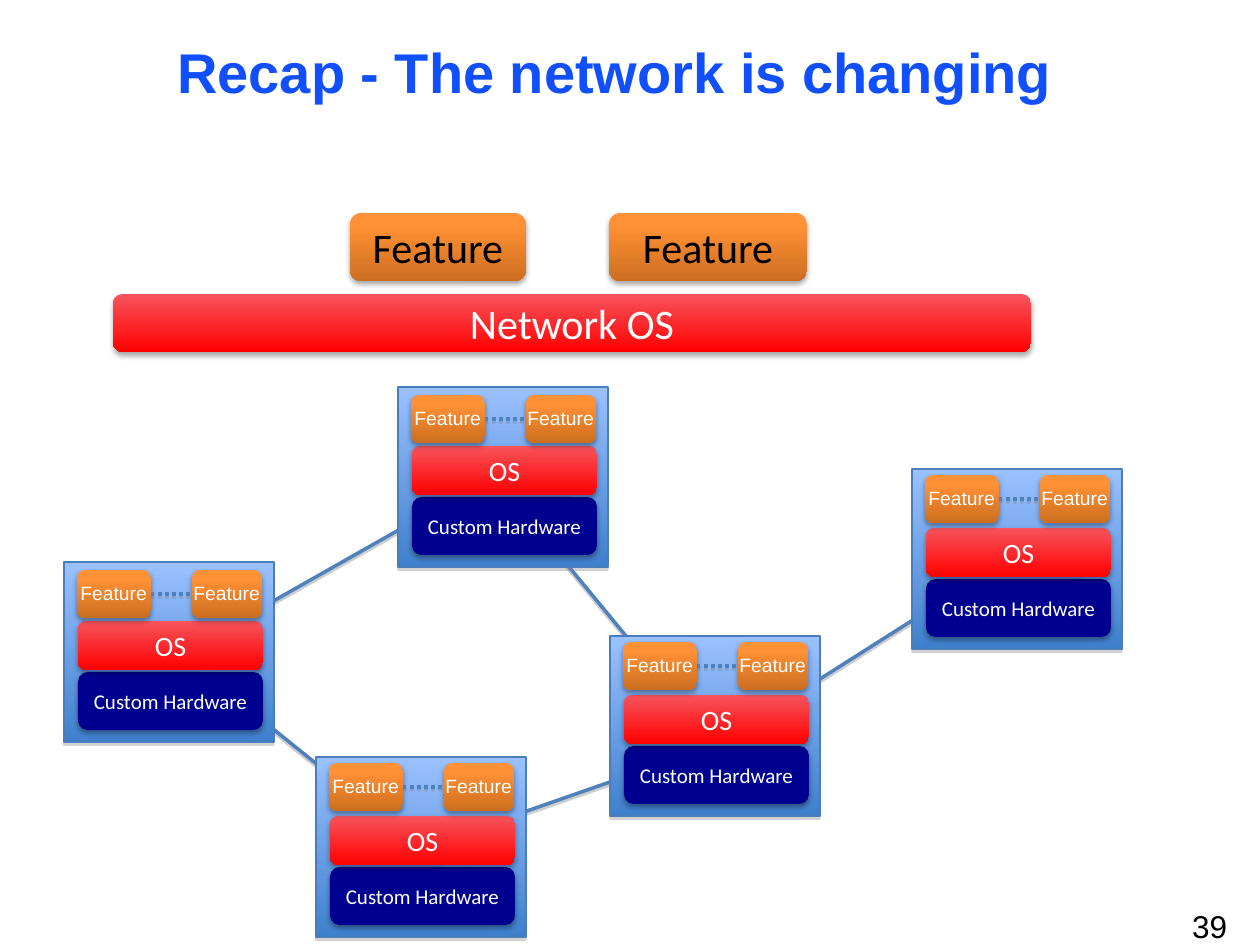
from lxml import etree
from pptx import Presentation
from pptx.dml.color import RGBColor
from pptx.enum.dml import MSO_LINE
from pptx.enum.shapes import MSO_CONNECTOR, MSO_SHAPE
from pptx.enum.text import MSO_ANCHOR, MSO_AUTO_SIZE, PP_ALIGN
from pptx.oxml.ns import qn
from pptx.util import Emu, Pt

RECT, ROUND = MSO_SHAPE.RECTANGLE, MSO_SHAPE.ROUNDED_RECTANGLE
STRAIGHT, DOT = MSO_CONNECTOR.STRAIGHT, MSO_LINE.ROUND_DOT
MIDDLE, TOP = MSO_ANCHOR.MIDDLE, MSO_ANCHOR.TOP
CENTER, LEFT = PP_ALIGN.CENTER, PP_ALIGN.LEFT
GROW = MSO_AUTO_SIZE.SHAPE_TO_FIT_TEXT

SCALE = 914400 / 126
WHITE, BLACK, NAVY = "FFFFFF", "000000", "000090"
LINK_BLUE, EDGE_BLUE, TITLE_BLUE = "4F81BD", "4A7EBB", "104FFB"
BLUE = [(0, "9BC1FF"), (100, "3F80CD")]
RED = [(0, "F7545C"), (100, "FF0000")]
ORANGE = [(0, "FF9136"), (20, "FF9034"), (100, "CC6E20")]
BOX_SHADOW = (BLACK, 35, 3.1, 1.8)
DEVICE_SHADOW = ("808080", 35, 0, 1.8)
LINE_SHADOW = ("808080", 38, 0, 1.6)

DEVICES = [(64, 562, 8), (398, 387, 8), (912, 469, 6), (316, 757, 6), (610, 636, 6)]
HUBS = [(180, 654), (494, 476), (1017, 554), (421, 848), (716, 745)]
LINKS = [(0, 1), (1, 4), (3, 4), (0, 3), (4, 2)]


def px(n):
    return Emu(round(n * SCALE))


def rgb(color):
    return RGBColor.from_string(color)


def sub(parent, tag, **attrs):
    el = etree.SubElement(parent, qn(tag))
    for name, value in attrs.items():
        el.set(name, str(value))
    return el


def add_shadow(shape, color, alpha, blur, dist):
    effects = sub(shape._element.spPr, "a:effectLst")
    outer = sub(effects, "a:outerShdw", blurRad=Pt(blur), dist=Pt(dist),
                dir=5400000, rotWithShape=0)
    clr = sub(outer, "a:srgbClr", val=color)
    sub(clr, "a:alpha", val=alpha * 1000)


def set_fill(shape, fill):
    if isinstance(fill, str):
        shape.fill.solid()
        shape.fill.fore_color.rgb = rgb(fill)
        return
    shape.fill.gradient()
    grad = shape._element.spPr.find(qn("a:gradFill"))
    for child in list(grad):
        grad.remove(child)
    stops = sub(grad, "a:gsLst")
    for pos, color in fill:
        sub(sub(stops, "a:gs", pos=pos * 1000), "a:srgbClr", val=color)
    sub(grad, "a:lin", ang=5400000, scaled=0)


def write(shape, text, size, font, color, align=CENTER, anchor=MIDDLE, bold=False):
    tf = shape.text_frame
    tf.vertical_anchor = anchor
    p = tf.paragraphs[0]
    p.alignment = align
    r = p.add_run()
    r.text = text
    r.font.size, r.font.name, r.font.bold = Pt(size), font, bold
    r.font.color.rgb = rgb(color)
    return tf


def add_box(shapes, x, y, w, h, fill, text="", size=12, color=WHITE):
    sp = shapes.add_shape(ROUND, px(x), px(y), px(w), px(h))
    set_fill(sp, fill)
    sp.line.fill.background()
    add_shadow(sp, *BOX_SHADOW)
    if text:
        write(sp, text, size, "Calibri", color)


def add_frame(shapes, x, y):
    sp = shapes.add_shape(RECT, px(x), px(y), px(210), px(180))
    set_fill(sp, BLUE)
    sp.line.color.rgb = rgb(EDGE_BLUE)
    sp.line.width = Pt(0.75)
    add_shadow(sp, *DEVICE_SHADOW)


def add_line(shapes, start, end, dash=None):
    line = shapes.add_connector(STRAIGHT, *map(px, start + end))
    line.line.color.rgb = rgb(LINK_BLUE)
    line.line.width = Pt(2)
    if dash:
        line.line.dash_style = dash
    add_shadow(line, *LINE_SHADOW)


def add_label(shapes, x, y, w, h, text, size, color, wrap):
    tb = shapes.add_textbox(px(x), px(y), px(w), px(h))
    tf = write(tb, text, size, "Arial", color, LEFT, TOP)
    tf.word_wrap = wrap
    tf.auto_size = GROW
    return tf


def add_features(shapes, x, y):
    group = shapes.add_group_shape().shapes
    add_box(group, x, y, 74, 48, ORANGE)
    add_box(group, x + 115, y, 70, 48, ORANGE)
    add_line(group, (x + 74, y + 24), (x + 115, y + 24), DOT)
    for dx in (-9, 104):
        add_label(group, x + dx, y + 5, 92, 36, "Feature", 11, WHITE, False)


def add_device(shapes, x, y, feature_gap):
    add_frame(shapes, x, y)
    add_box(shapes, x + 14, y + 110, 185, 58, NAVY, "Custom Hardware", 12)
    add_box(shapes, x + 14, y + 59, 185, 49, RED, "OS", 16)
    add_features(shapes, x + 13, y + feature_gap)


def add_controller(shapes):
    add_box(shapes, 113, 294, 918, 58, RED, "Network OS", 24)
    group = shapes.add_group_shape().shapes
    for x, w in ((350, 176), (609, 198)):
        add_box(group, x, 213, w, 68, ORANGE, "Feature", 24, BLACK)


def add_title(s, text):
    title = s.shapes.title
    title.left, title.top, title.width, title.height = map(px, (32, -59, 1166, 261))
    write(title, text, 32, "Arial", TITLE_BLUE, bold=True)


def add_page_number(shapes, text):
    tf = add_label(shapes, 1188, 907, 42, 38, text, 18, BLACK, True)
    tf.margin_left = px(4)
    tf.margin_right = tf.margin_top = tf.margin_bottom = 0


def main():
    prs = Presentation()
    prs.slide_width, prs.slide_height = px(1260), px(945)
    s = prs.slides.add_slide(prs.slide_layouts[5])
    add_title(s, "Recap - The network is changing")
    for a, b in LINKS:
        add_line(s.shapes, HUBS[a], HUBS[b])
    for device in DEVICES:
        add_device(s.shapes, *device)
    add_controller(s.shapes)
    add_page_number(s.shapes, "39")
    prs.save("out.pptx")


if __name__ == "__main__":
    main()
